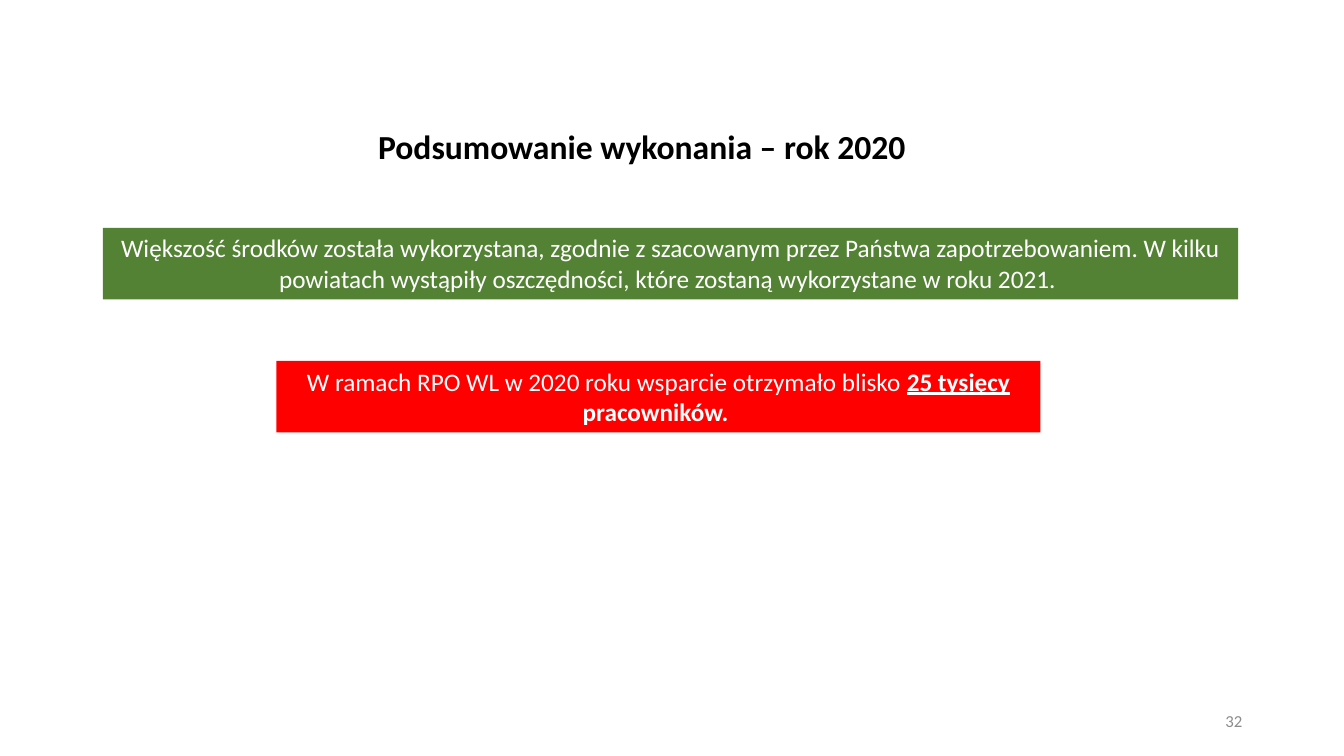
"""Build the 2020 summary slide."""
from pptx import Presentation
from pptx.dml.color import RGBColor as RGB
from pptx.enum.shapes import MSO_SHAPE as Form
from pptx.enum.text import MSO_ANCHOR as Anchor, MSO_AUTO_SIZE as Auto, PP_ALIGN as Align
from pptx.util import Inches, Pt

HUES = {"black": "000000", "white": "FFFFFF", "grey": "8C8C8C",
        "green": "548235", "red": "FF0000"}


def hue(name):
    return RGB.from_string(HUES[name])


def write(shape, runs, size, color, align, anchor=Anchor.TOP):
    frame = shape.text_frame
    frame.word_wrap = True
    frame.auto_size = Auto.NONE
    frame.vertical_anchor = anchor
    para = frame.paragraphs[0]
    para.alignment = align
    for text, bold, under in runs:
        run = para.add_run()
        run.text = text
        font = run.font
        font.name = "Calibri"
        font.size = Pt(size)
        font.bold = bold
        font.underline = under
        font.color.rgb = hue(color)


deck = Presentation()
deck.slide_width = Inches(13.33)
deck.slide_height = Inches(7.5)
slide = deck.slides.add_slide(deck.slide_layouts[5])

title = slide.shapes.title
title.left, title.top = Inches(3.65), Inches(1.2)
title.width, title.height = Inches(5.48), Inches(0.5)
write(title, [("Podsumowanie wykonania – rok 2020", True, False)],
      24, "black", Align.LEFT)

bands = [
    (1.02, 2.26, 11.26, "green", [
        ("Większość środków została wykorzystana, zgodnie z szacowanym przez "
         "Państwa zapotrzebowaniem. W kilku powiatach wystąpiły oszczędności, "
         "które zostaną wykorzystane w roku 2021. ", False, False)]),
    (2.74, 3.58, 7.58, "red", [
        ("W ramach RPO WL w 2020 roku wsparcie otrzymało blisko ", False, False),
        ("25 tysięcy ", True, True),
        ("pracowników. ", True, False)]),
]
for left, top, width, fill, runs in bands:
    band = slide.shapes.add_shape(Form.RECTANGLE, Inches(left), Inches(top),
                                  Inches(width), Inches(0.71))
    band.shadow.inherit = False
    band.fill.solid()
    band.fill.fore_color.rgb = hue(fill)
    band.line.fill.background()
    write(band, runs, 18, "white", Align.CENTER)

page = slide.shapes.add_textbox(Inches(9.42), Inches(6.95), Inches(3), Inches(0.4))
write(page, [("32", False, False)], 12, "grey", Align.RIGHT, Anchor.MIDDLE)

deck.save("out.pptx")
